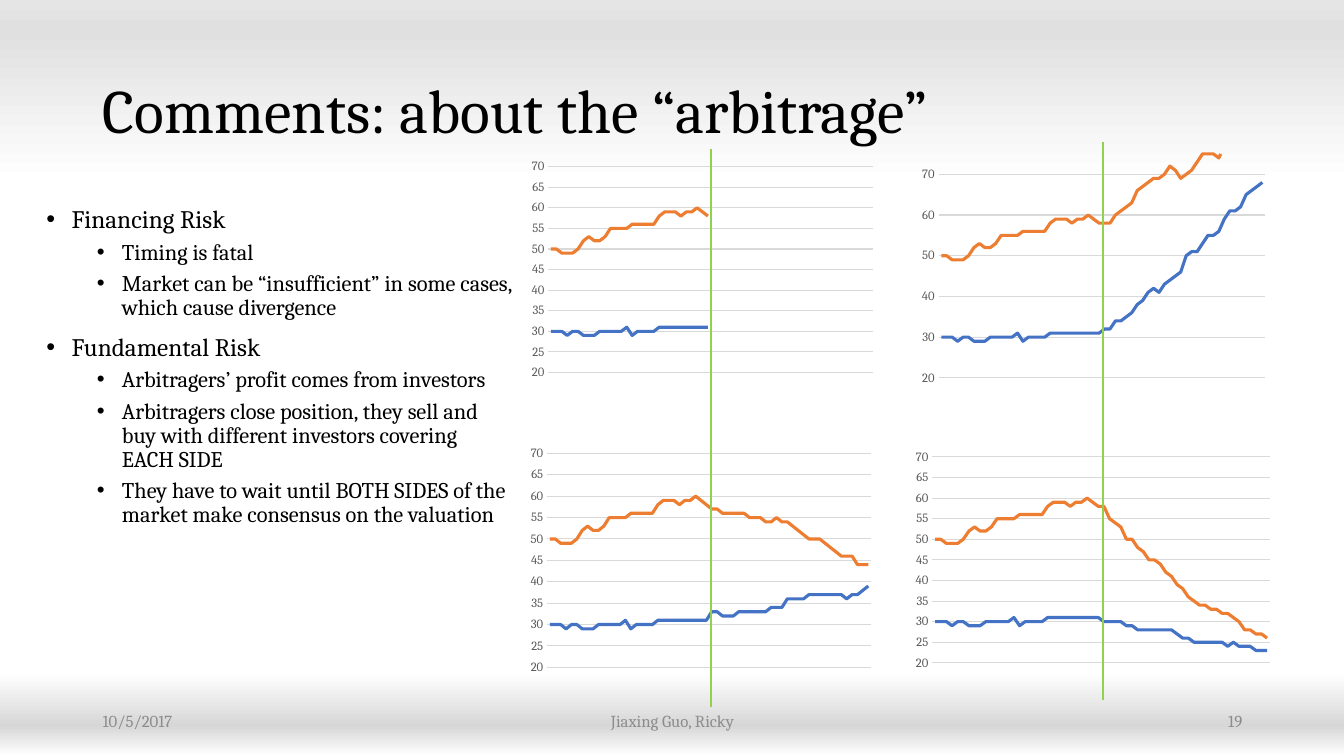
import pptx
import pptx.chart.data
import pptx.dml.color
import pptx.enum.chart
import pptx.enum.shapes
import pptx.enum.text
import pptx.oxml.ns
import pptx.util
from lxml import etree

PX = 9144  # EMU per px, 100 px to the inch
FONT = "Cambria"
COLORS = {"text": "000000", "footer": "8C8C8C", "axis": "595959", "grid": "D9D9D9",
          "low": "4472C4", "high": "ED7D31", "marker": "92D050"}
BACKGROUND = [(0, "FFFFFF"), (4, "D7D7D7"), (11, "FFFFFF"),
              (76, "FFFFFF"), (96, "E0E0E0"), (100, "E5E5E5")]
BULLETS = [
    (0, "Financing Risk"),
    (1, "Timing is fatal"),
    (1, "Market can be “insufficient” in some cases, which cause divergence"),
    (0, "Fundamental Risk"),
    (1, "Arbitragers’ profit comes from investors"),
    (1, "Arbitragers close position, they sell and buy with different investors "
        "covering EACH SIDE"),
    (1, "They have to wait until BOTH SIDES of the market make consensus on the valuation"),
]

# Every chart shares the first 30 periods; the scenarios differ afterwards
LOW_START = [30, 30, 30, 29, 30, 30, 29, 29, 29, 30, 30, 30, 30, 30, 31,
             29, 30, 30, 30, 30, 31, 31, 31, 31, 31, 31, 31, 31, 31, 31]
HIGH_START = [50, 50, 49, 49, 49, 50, 52, 53, 52, 52, 53, 55, 55, 55, 55,
              56, 56, 56, 56, 56, 58, 59, 59, 59, 58, 59, 59, 60, 59, 58]
UNKNOWN = [None] * 30
CONVERGE_LOW = [33, 33, 32, 32, 32, 33, 33, 33, 33, 33, 33, 34, 34, 34, 36,
                36, 36, 36, 37, 37, 37, 37, 37, 37, 37, 36, 37, 37, 38, 39]
CONVERGE_HIGH = [57, 57, 56, 56, 56, 56, 56, 55, 55, 55, 54, 54, 55, 54, 54,
                 53, 52, 51, 50, 50, 50, 49, 48, 47, 46, 46, 46, 44, 44, 44]
RISE_LOW = [32, 32, 34, 34, 35, 36, 38, 39, 41, 42, 41, 43, 44, 45, 46,
            50, 51, 51, 53, 55, 55, 56, 59, 61, 61, 62, 65, 66, 67, 68]
RISE_HIGH = [58, 58, 60, 61, 62, 63, 66, 67, 68, 69, 69, 70, 72, 71, 69,
             70, 71, 73, 75, 75, 75, 74, 77, 76, 78, 79, 78, 77, 78, 80]
FALL_LOW = [30, 30, 30, 30, 29, 29, 28, 28, 28, 28, 28, 28, 28, 27, 26,
            26, 25, 25, 25, 25, 25, 25, 24, 25, 24, 24, 24, 23, 23, 23]
FALL_HIGH = [58, 55, 54, 53, 50, 50, 48, 47, 45, 45, 44, 42, 41, 39, 38,
             36, 35, 34, 34, 33, 33, 32, 32, 31, 30, 28, 28, 27, 27, 26]

qn = pptx.oxml.ns.qn
ALIGN = pptx.enum.text.PP_ALIGN


def rgb(name):
    return pptx.dml.color.RGBColor.from_string(COLORS[name])


def place(shape, box):
    shape.left, shape.top, shape.width, shape.height = [v * PX for v in box]


def style_font(font, size, color):
    font.name = FONT
    font.size = pptx.util.Pt(size)
    font.color.rgb = rgb(color)


def write(p, text, size=18, color="text", align=ALIGN.LEFT, spacing=None, before=0):
    p.alignment = align
    p.line_spacing = spacing
    p.space_before = pptx.util.Pt(before)
    r = p.add_run()
    r.text = text
    style_font(r.font, size, color)


def set_background(s):
    fill = s.background.fill
    fill.gradient()
    fill.gradient_angle = 90
    stops = s.element.find(".//" + qn("a:gsLst"))
    for stop in list(stops):
        stops.remove(stop)
    for percent, color in BACKGROUND:
        stop = etree.SubElement(stops, qn("a:gs"), pos=str(percent * 1000))
        etree.SubElement(stop, qn("a:srgbClr"), val=color)


def add_title(s, text, box):
    place(s.shapes.title, box)
    tf = s.shapes.title.text_frame
    tf.auto_size = pptx.enum.text.MSO_AUTO_SIZE.NONE
    tf.vertical_anchor = pptx.enum.text.MSO_ANCHOR.MIDDLE
    write(tf.paragraphs[0], text, size=44, spacing=0.9)


def add_bullets(s, items, box):
    body = s.placeholders[1]
    place(body, box)
    tf = body.text_frame
    tf.auto_size = pptx.enum.text.MSO_AUTO_SIZE.NONE
    for i, (level, text) in enumerate(items):
        p = tf.add_paragraph() if i else tf.paragraphs[0]
        p.level = level
        write(p, text, size=18 - 2 * level, spacing=0.9, before=10 - 5 * level)
        props = p._p.get_or_add_pPr()
        props.set("marL", str((25 + 50 * level) * PX))
        props.set("indent", str(-25 * PX))
        etree.SubElement(props, qn("a:buFont"), typeface="Arial")
        etree.SubElement(props, qn("a:buChar"), char="•")


def set_plot_layout(chart, fractions):
    plot_area = chart.element.find(".//" + qn("c:plotArea"))
    for old in plot_area.findall(qn("c:layout")):
        plot_area.remove(old)
    layout = etree.Element(qn("c:layout"))
    plot_area.insert(0, layout)
    manual = etree.SubElement(layout, qn("c:manualLayout"))
    settings = [("layoutTarget", "inner"), ("xMode", "edge"), ("yMode", "edge")]
    settings += zip("xywh", fractions)
    for tag, value in settings:
        etree.SubElement(manual, qn("c:" + tag), val=str(value))


def add_price_chart(s, box, low_end, high_end, top=70, step=5, plot_y=0.05, plot_h=0.9):
    data = pptx.chart.data.CategoryChartData()
    data.categories = [str(n) for n in range(1, 61)]
    data.add_series("Series 1", LOW_START + low_end)
    data.add_series("Series 2", HIGH_START + high_end)
    kind = pptx.enum.chart.XL_CHART_TYPE.LINE
    chart = s.shapes.add_chart(kind, *[v * PX for v in box], data).chart
    chart.has_legend = False
    chart.has_title = False
    style_font(chart.font, 10, "text")
    chart.plots[0].vary_by_categories = False
    for series, color in zip(chart.plots[0].series, ("low", "high")):
        series.smooth = False
        series.format.line.color.rgb = rgb(color)
        series.format.line.width = pptx.util.Pt(2.25)
    chart.category_axis.visible = False
    axis = chart.value_axis
    axis.minimum_scale, axis.maximum_scale, axis.major_unit = 20, top, step
    axis.major_tick_mark = pptx.enum.chart.XL_TICK_MARK.NONE
    axis.format.line.fill.background()
    axis.major_gridlines.format.line.color.rgb = rgb("grid")
    axis.major_gridlines.format.line.width = pptx.util.Pt(0.75)
    style_font(axis.tick_labels.font, 9, "axis")
    set_plot_layout(chart, (0.07, plot_y, 0.91, plot_h))


def add_time_marker(s, x, top, bottom):
    straight = pptx.enum.shapes.MSO_CONNECTOR.STRAIGHT
    line = s.shapes.add_connector(straight, x * PX, top * PX, x * PX, bottom * PX)
    line.line.color.rgb = rgb("marker")
    line.line.width = pptx.util.Pt(1.5)
    etree.SubElement(line.element.spPr, qn("a:effectLst"))


def add_footer(s, text, x, width, align):
    sp = s.shapes.add_textbox(x * PX, 695 * PX, width * PX, 40 * PX)
    tf = sp.text_frame
    tf.word_wrap = True
    tf.vertical_anchor = pptx.enum.text.MSO_ANCHOR.MIDDLE
    write(tf.paragraphs[0], text, size=12, color="footer", align=align)


def main():
    prs = pptx.Presentation()
    prs.slide_width, prs.slide_height = 1333 * PX, 750 * PX
    s = prs.slides.add_slide(prs.slide_layouts[1])
    set_background(s)

    # Title and list
    add_title(s, "Comments: about the “arbitrage”", (92, 40, 1150, 145))
    add_bullets(s, BULLETS, (36, 200, 482, 476))

    # Price scenarios
    add_price_chart(s, (519, 154, 354, 227), UNKNOWN, UNKNOWN)
    add_price_chart(s, (518, 438, 353, 236), CONVERGE_LOW, CONVERGE_HIGH)
    add_price_chart(s, (906, 148, 356, 239), RISE_LOW, RISE_HIGH,
                    top=75, step=10, plot_y=0.02, plot_h=0.93)
    add_price_chart(s, (899, 442, 368, 227), FALL_LOW, FALL_HIGH)

    # Moment the position is taken
    add_time_marker(s, 705, 148, 701)
    add_time_marker(s, 1094, 141, 694)

    # Footer
    add_footer(s, "10/5/2017", 92, 300, ALIGN.LEFT)
    add_footer(s, "Jiaxing Guo, Ricky", 442, 450, ALIGN.CENTER)
    add_footer(s, "19", 942, 300, ALIGN.RIGHT)

    prs.save("out.pptx")


if __name__ == "__main__":
    main()
